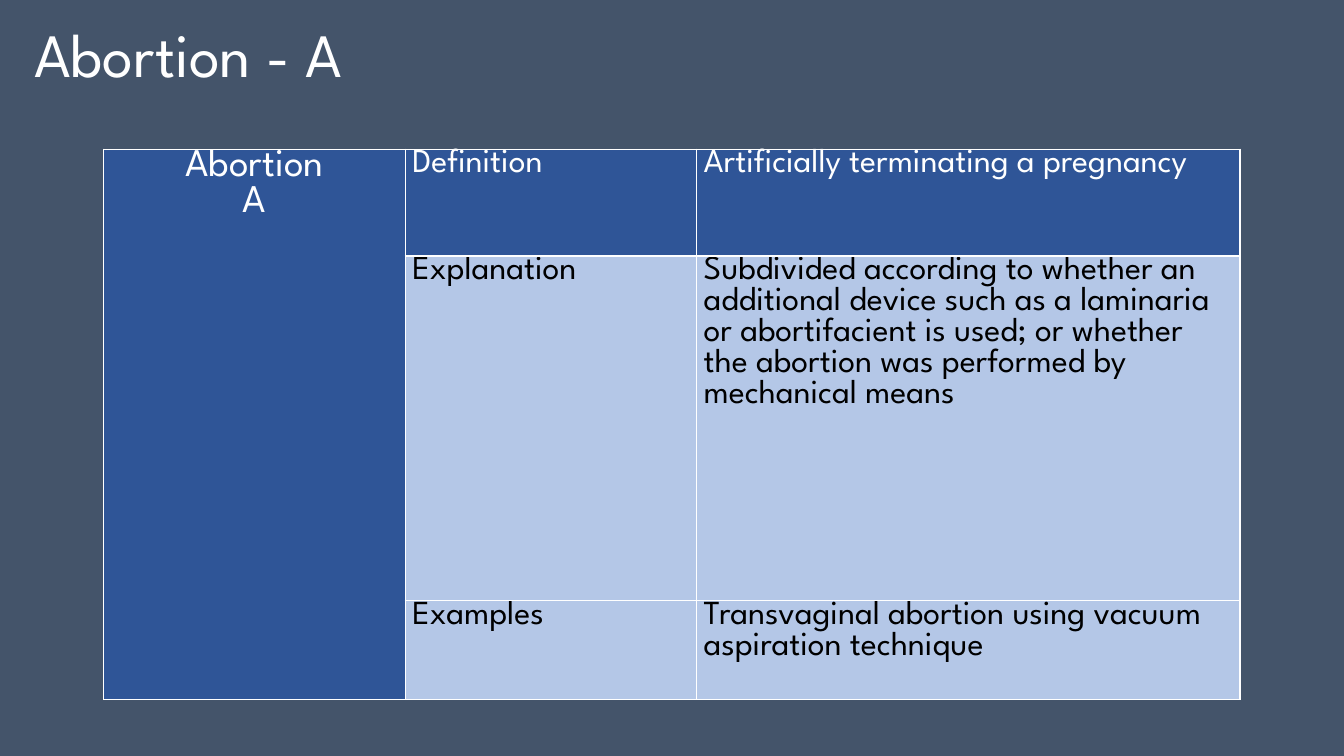
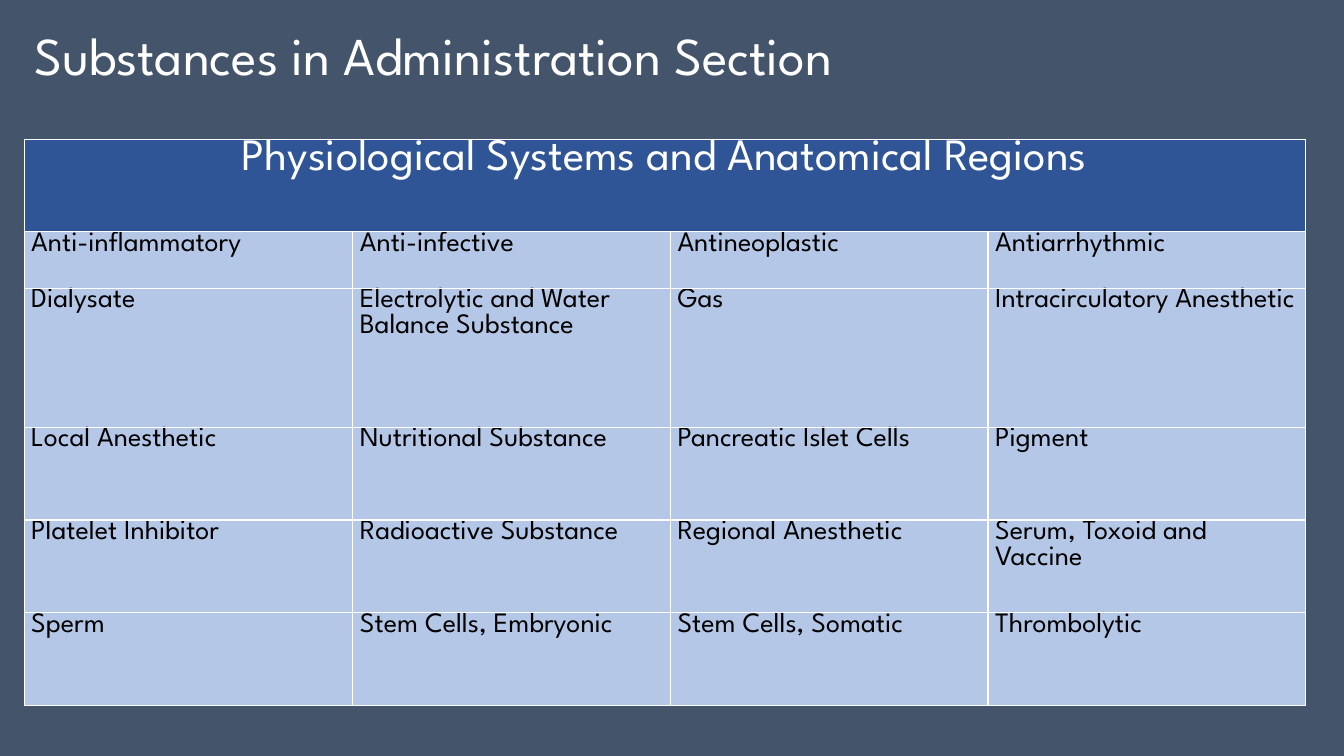
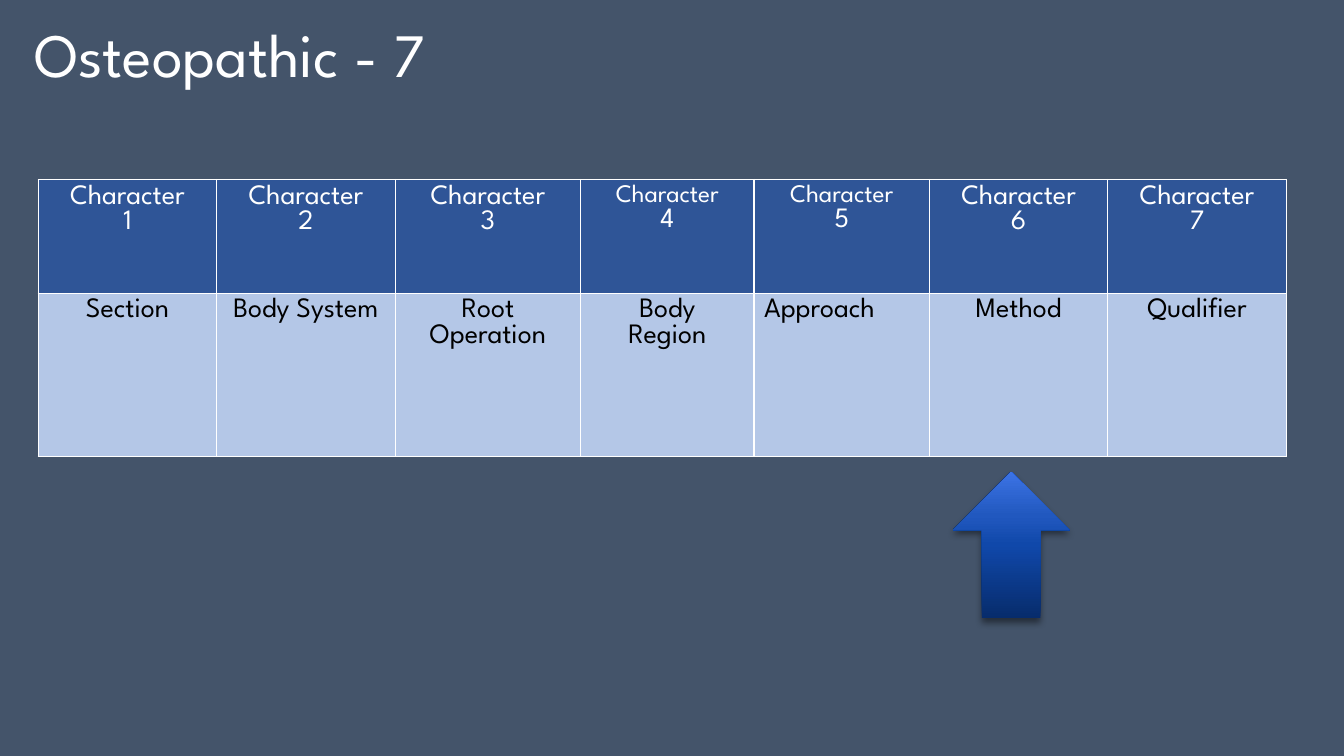
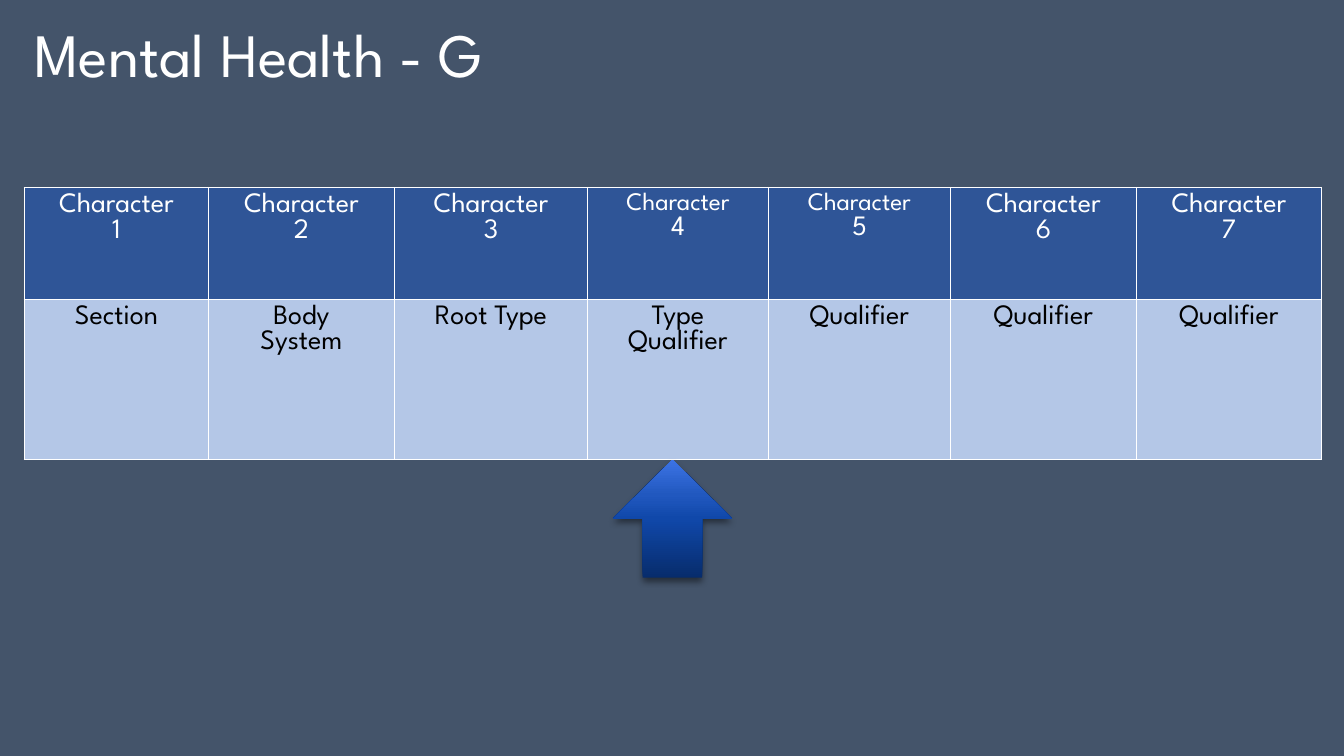
from dataclasses import dataclass

from lxml import etree
from pptx import Presentation
from pptx import util as u
from pptx.dml.color import RGBColor
from pptx.enum import shapes, text
from pptx.oxml import ns, parse_xml


@dataclass(frozen=True)
class Theme:
    """Colours and type sizes shared by all slides."""
    font: str = "League Spartan"
    background: str = "44546A"
    header: str = "2F5597"
    body: str = "B4C7E7"
    light: str = "FFFFFF"
    dark: str = "000000"
    arrow_stops: tuple = ((0, "072C6C"), (50, "1048AA"), (70, "2158BF"), (100, "3C73E5"))
    title: int = 44
    long_title: int = 38
    banner: int = 32
    subject: int = 28
    detail: int = 24
    cell: int = 20
    narrow: int = 18
    border: int = 1


CENTER = text.PP_ALIGN.CENTER
LEFT = text.PP_ALIGN.LEFT
TIGHT = (0.07, 0)
ROOMY = (0.1, 0.05)


class Deck:
    """Holds the style and the current slide."""

    def __init__(self, theme):
        self.theme = theme
        self.presentation = Presentation()
        self.presentation.slide_width = u.Inches(13.33)
        self.presentation.slide_height = u.Inches(7.5)
        fill = self.presentation.slide_master.background.fill
        fill.solid()
        fill.fore_color.rgb = RGBColor.from_string(theme.background)
        self.slide = None

    def style(self, paragraph, size, colour, align=LEFT):
        paragraph.alignment = align
        paragraph.font.name = self.theme.font
        paragraph.font.size = u.Pt(size)
        paragraph.font.color.rgb = RGBColor.from_string(colour)

    def new_slide(self, title, size=None):
        self.slide = self.presentation.slides.add_slide(self.presentation.slide_layouts[6])
        box = self.slide.shapes.add_textbox(
            u.Inches(0.24), u.Inches(0.12), u.Inches(9.72), u.Inches(0.91))
        frame = box.text_frame
        frame.word_wrap = True
        frame.vertical_anchor = text.MSO_ANCHOR.MIDDLE
        frame.text = title
        paragraph = frame.paragraphs[0]
        paragraph.line_spacing = 0.9
        self.style(paragraph, size or self.theme.title, self.theme.light)

    def table(self, left, top, widths, heights):
        """Add an unbanded table with the given column widths and row heights."""
        table = self.slide.shapes.add_table(
            len(heights), len(widths), u.Inches(left), u.Inches(top),
            u.Inches(sum(widths)), u.Inches(sum(heights))).table
        table.first_row = table.horz_banding = False
        for column, width in zip(table.columns, widths):
            column.width = u.Inches(width)
        for row, height in zip(table.rows, heights):
            row.height = u.Inches(height)
        return table

    def cell(self, cell, words, size, header=False, align=LEFT, inset=TIGHT):
        """Fill one cell; each line of words is a paragraph."""
        theme = self.theme
        cell.margin_left = cell.margin_right = u.Inches(inset[0])
        cell.margin_top = cell.margin_bottom = u.Inches(inset[1])
        properties = cell._tc.get_or_add_tcPr()
        for side in ("lnL", "lnR", "lnT", "lnB"):
            properties.append(parse_xml(
                f'<a:{side} {ns.nsdecls("a")} w="{u.Pt(theme.border)}"><a:solidFill>'
                f'<a:srgbClr val="{theme.light}"/></a:solidFill></a:{side}>'))
        cell.fill.solid()
        cell.fill.fore_color.rgb = RGBColor.from_string(theme.header if header else theme.body)
        cell.text_frame.text = words
        for paragraph in cell.text_frame.paragraphs:
            self.style(paragraph, size, theme.light if header else theme.dark, align)

    def character_table(self, left, top, widths, heights, meanings, left_aligned=()):
        """Numbered code characters above their meanings."""
        table = self.table(left, top, widths, heights)
        for index, meaning in enumerate(meanings):
            number = index + 1
            heading = table.cell(0, index)
            self.cell(heading, f"Character\n{number}", self.theme.cell, True, CENTER, ROOMY)
            if number in (4, 5):
                heading.text_frame.paragraphs[0].font.size = u.Pt(self.theme.narrow)
            align = LEFT if number in left_aligned else CENTER
            self.cell(table.cell(1, index), meaning, self.theme.cell, False, align, ROOMY)

    def up_arrow(self, left, top, width, height):
        shape = self.slide.shapes.add_shape(
            shapes.MSO_SHAPE.UP_ARROW, u.Inches(left), u.Inches(top),
            u.Inches(width), u.Inches(height))
        shape.line.fill.background()
        shape.shadow.inherit = False
        # Four-stop gradient, dark at the bottom
        shape.fill.background()
        properties = shape._element.spPr
        stops = "".join(
            f'<a:gs pos="{position * 1000}"><a:srgbClr val="{colour}"/></a:gs>'
            for position, colour in self.theme.arrow_stops)
        properties.replace(properties.find(ns.qn("a:noFill")), parse_xml(
            f'<a:gradFill {ns.nsdecls("a")} rotWithShape="1"><a:gsLst>{stops}</a:gsLst>'
            f'<a:lin ang="{270 * 60000}" scaled="0"/></a:gradFill>'))
        # Soft shadow below
        shadow = etree.SubElement(
            properties.find(ns.qn("a:effectLst")), ns.qn("a:outerShdw"),
            blurRad=str(u.Pt(5)), dist=str(u.Pt(3)), dir=str(90 * 60000), rotWithShape="0")
        colour = etree.SubElement(shadow, ns.qn("a:srgbClr"), val=self.theme.dark)
        etree.SubElement(colour, ns.qn("a:alpha"), val="45000")


def abortion_slide(deck):
    theme = deck.theme
    deck.new_slide("Abortion - A")
    table = deck.table(1.03, 1.48, (2.99, 2.89, 5.39), (1.06, 3.42, 0.98))
    rows = (
        ("Definition", "Artificially terminating a pregnancy"),
        ("Explanation", "Subdivided according to whether an additional device such as a "
                        "laminaria or abortifacient is used; or whether the abortion was "
                        "performed by mechanical means"),
        ("Examples", "Transvaginal abortion using vacuum aspiration technique"),
    )
    for index, row in enumerate(rows):
        subject = "" if index else "Abortion\nA"
        deck.cell(table.cell(index, 0), subject, theme.subject, True, CENTER)
        for column, words in enumerate(row, 1):
            deck.cell(table.cell(index, column), words, theme.detail, index == 0)
    table.cell(0, 0).merge(table.cell(2, 0))


def substances_slide(deck):
    theme = deck.theme
    deck.new_slide("Substances in Administration Section", theme.long_title)
    table = deck.table(0.24, 1.38, (3.26, 3.15, 3.15, 3.15),
                       (0.92, 0.56, 1.38, 0.92, 0.92, 0.92))
    rows = (
        ("Physiological Systems and Anatomical Regions", "", "", ""),
        ("Anti-inflammatory", "Anti-infective", "Antineoplastic", "Antiarrhythmic"),
        ("Dialysate", "Electrolytic and Water Balance Substance", "Gas",
         "Intracirculatory Anesthetic"),
        ("Local Anesthetic", "Nutritional Substance", "Pancreatic Islet Cells", "Pigment"),
        ("Platelet Inhibitor", "Radioactive Substance", "Regional Anesthetic",
         "Serum, Toxoid and Vaccine"),
        ("Sperm", "Stem Cells, Embryonic", "Stem Cells, Somatic", "Thrombolytic"),
    )
    for index, row in enumerate(rows):
        header = index == 0
        for column, words in enumerate(row):
            deck.cell(table.cell(index, column), words, theme.banner if header else theme.cell,
                      header, CENTER if header else LEFT)
    table.cell(0, 0).merge(table.cell(0, 3))


def osteopathic_slide(deck):
    deck.new_slide("Osteopathic - 7")
    deck.character_table(
        0.38, 1.78, (1.77, 1.77, 1.84, 1.72, 1.74, 1.77, 1.77), (1.13, 1.62),
        ("Section", "Body System", "Root Operation", "Body\nRegion", "Approach", "Method",
         "Qualifier"), left_aligned=(5,))
    deck.up_arrow(9.45, 4.68, 1.16, 1.45)


def mental_health_slide(deck):
    deck.new_slide("Mental Health - G")
    deck.character_table(
        0.24, 1.86, (1.83, 1.84, 1.92, 1.79, 1.81, 1.84, 1.84), (1.11, 1.59),
        ("Section", "Body\nSystem", "Root Type", "Type\nQualifier", "Qualifier", "Qualifier",
         "Qualifier"))
    deck.up_arrow(6.08, 4.56, 1.18, 1.17)


def main():
    deck = Deck(Theme())
    for build in (abortion_slide, substances_slide, osteopathic_slide, mental_health_slide):
        build(deck)
    deck.presentation.save("out.pptx")


if __name__ == "__main__":
    main()
